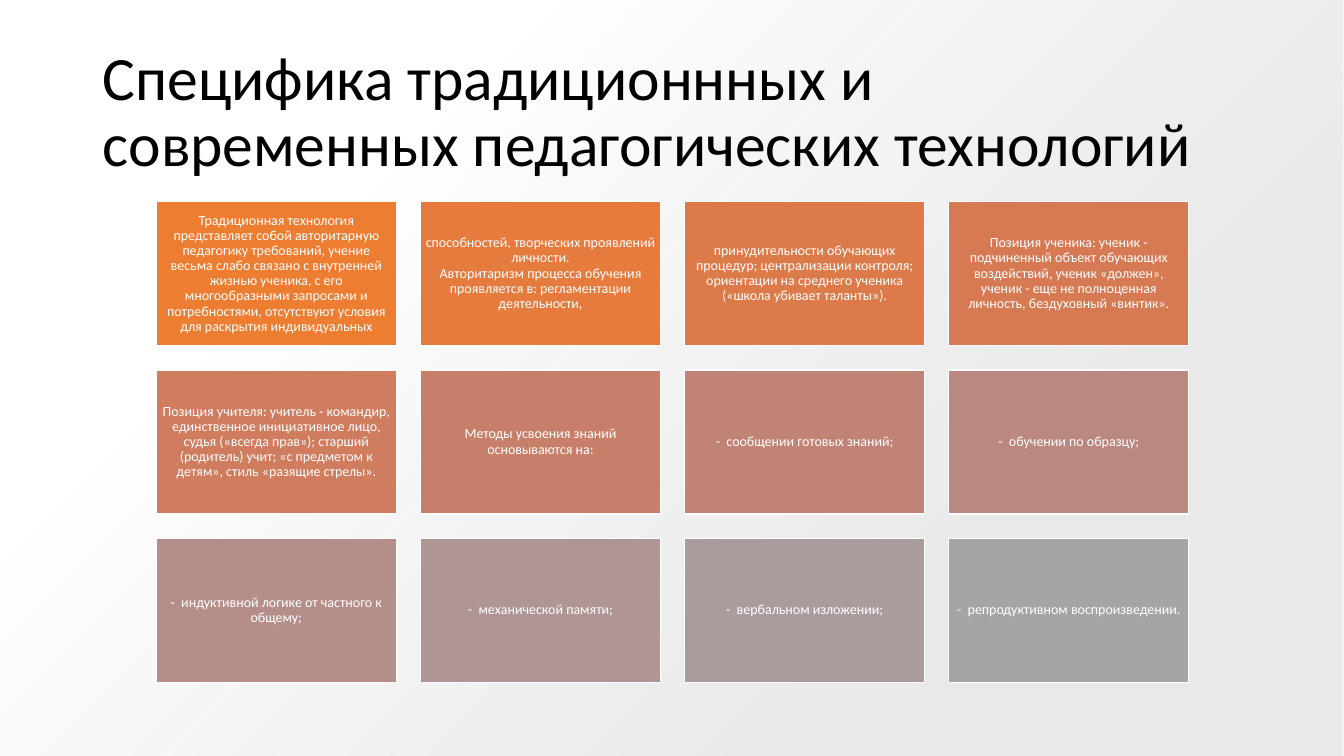
from lxml import etree
from pptx import Presentation, util as u
from pptx.dml.color import RGBColor
from pptx.enum import shapes, text

TITLE = "Специфика традиционнных и современных педагогических технологий"
CARDS = [
    ("ED7D31", "Традиционная технология представляет собой авторитарную педагогику "
               "требований, учение весьма слабо связано с внутренней жизнью ученика, с его "
               "многообразными запросами и потребностями, отсутствуют условия для раскрытия "
               "индивидуальных"),
    ("E57B3D", "способностей, творческих проявлений личности.\nАвторитаризм процесса обучения "
               "проявляется в: регламентации деятельности,"),
    ("DD7A49", "принудительности обучающих процедур; централизации контроля; ориентации на "
               "среднего ученика («школа убивает таланты»)."),
    ("D67A54", "Позиция ученика: ученик - подчиненный объект обучающих воздействий, ученик "
               "«должен», ученик - еще не полноценная личность, бездуховный «винтик»."),
    ("CF7C5F", "Позиция учителя: учитель - командир, единственное инициативное лицо, судья "
               "(«всегда прав»); старший (родитель) учит; «с предметом к детям», стиль "
               "«разящие стрелы»."),
    ("C87F6A", "Методы усвоения знаний основываются на:"),
    ("C18375", "-  сообщении готовых знаний;"),
    ("BB887F", "-  обучении по образцу;"),
    ("B58E89", "-  индуктивной логике от частного к общему;"),
    ("AF9593", "-  механической памяти;"),
    ("AA9C9C", "-  вербальном изложении;"),
    ("A5A5A5", "-  репродуктивном воспроизведении."),
]
GLOW = """<a:gradFill xmlns:a="http://schemas.openxmlformats.org/drawingml/2006/main" rotWithShape="1">
<a:gsLst>
<a:gs pos="28000"><a:srgbClr val="E7E6E6"><a:alpha val="84000"/></a:srgbClr></a:gs>
<a:gs pos="74000"><a:srgbClr val="FFFFFF"/></a:gs>
</a:gsLst>
<a:path path="circle"><a:fillToRect l="100000" t="100000"/></a:path>
</a:gradFill>"""


def colour(value):
    return RGBColor.from_string(value)


class TechnologySlide:
    font = "Calibri"
    columns = 4
    left, top = 1.55, 2
    column_step, row_step = 2.62, 1.67
    card_width, card_height = 2.38, 1.43

    def __init__(self, deck):
        self.width, self.height = deck.slide_width, deck.slide_height
        self.shapes = deck.slides.add_slide(deck.slide_layouts[6]).shapes

    def rectangle(self, *place):
        box = self.shapes.add_shape(shapes.MSO_SHAPE.RECTANGLE, *place)
        box.shadow.inherit = False
        return box

    def backdrop(self):
        glow = self.rectangle(0, 0, self.width, self.height)
        glow.line.fill.background()
        glow.fill.background()
        properties = glow._element.spPr
        properties.replace(properties.eg_fillProperties, etree.fromstring(GLOW))

    def fill_text(self, box, wording, size, ink, align):
        frame = box.text_frame
        frame.word_wrap = True
        frame.vertical_anchor = text.MSO_ANCHOR.MIDDLE
        paragraph = frame.paragraphs[0]
        paragraph.alignment = align
        paragraph.line_spacing = 0.9
        for number, line in enumerate(wording.split("\n")):
            if number:
                paragraph.add_line_break()
            run = paragraph.add_run()
            run.text = line
            run.font.name = self.font
            run.font.size = u.Pt(size)
            run.font.color.rgb = colour(ink)
        return frame

    def title(self, wording):
        heading = self.shapes.add_textbox(u.Inches(0.92), u.Inches(0.4),
                                          u.Inches(11.5), u.Inches(1.45))
        self.fill_text(heading, wording, 44, "000000", text.PP_ALIGN.LEFT)

    def card(self, index, fill, wording):
        row, column = divmod(index, self.columns)
        card = self.rectangle(u.Inches(self.left + column * self.column_step),
                              u.Inches(self.top + row * self.row_step),
                              u.Inches(self.card_width), u.Inches(self.card_height))
        card.fill.solid()
        card.fill.fore_color.rgb = colour(fill)
        card.line.color.rgb = colour("FFFFFF")
        card.line.width = u.Pt(1)
        frame = self.fill_text(card, wording, 10, "FFFFFF", text.PP_ALIGN.CENTER)
        frame.margin_left = frame.margin_right = u.Inches(0.04)
        frame.margin_top = frame.margin_bottom = u.Inches(0.04)


def main():
    deck = Presentation()
    deck.slide_width, deck.slide_height = u.Inches(13.33), u.Inches(7.5)
    slide = TechnologySlide(deck)
    slide.backdrop()
    slide.title(TITLE)
    for index, (fill, wording) in enumerate(CARDS):
        slide.card(index, fill, wording)
    deck.save("out.pptx")


if __name__ == "__main__":
    main()
